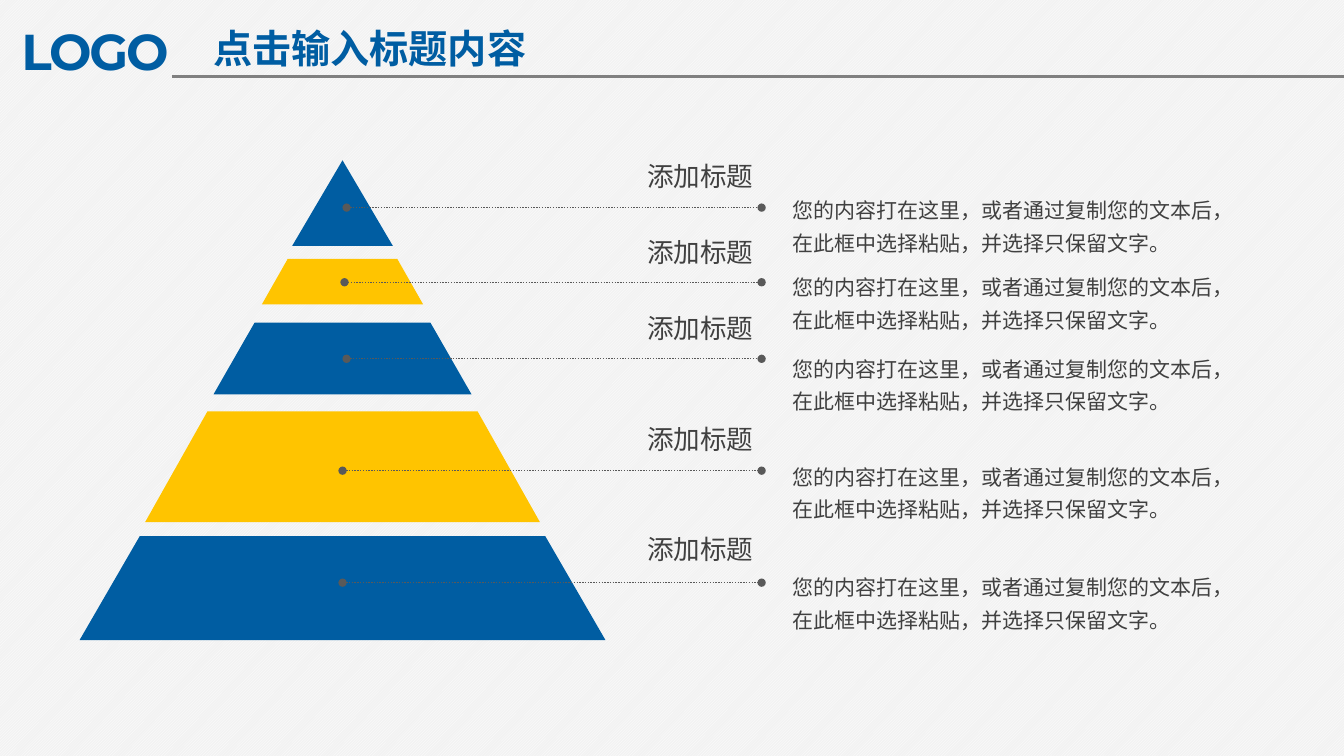
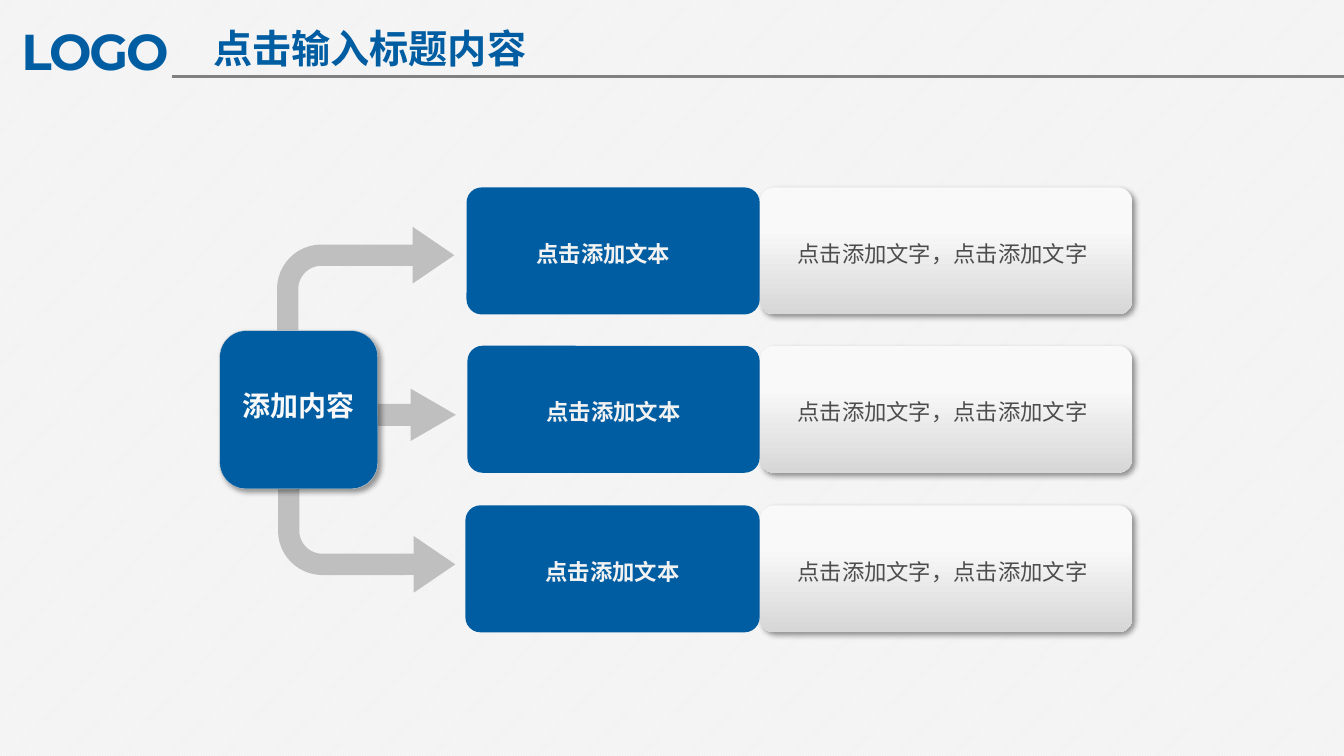
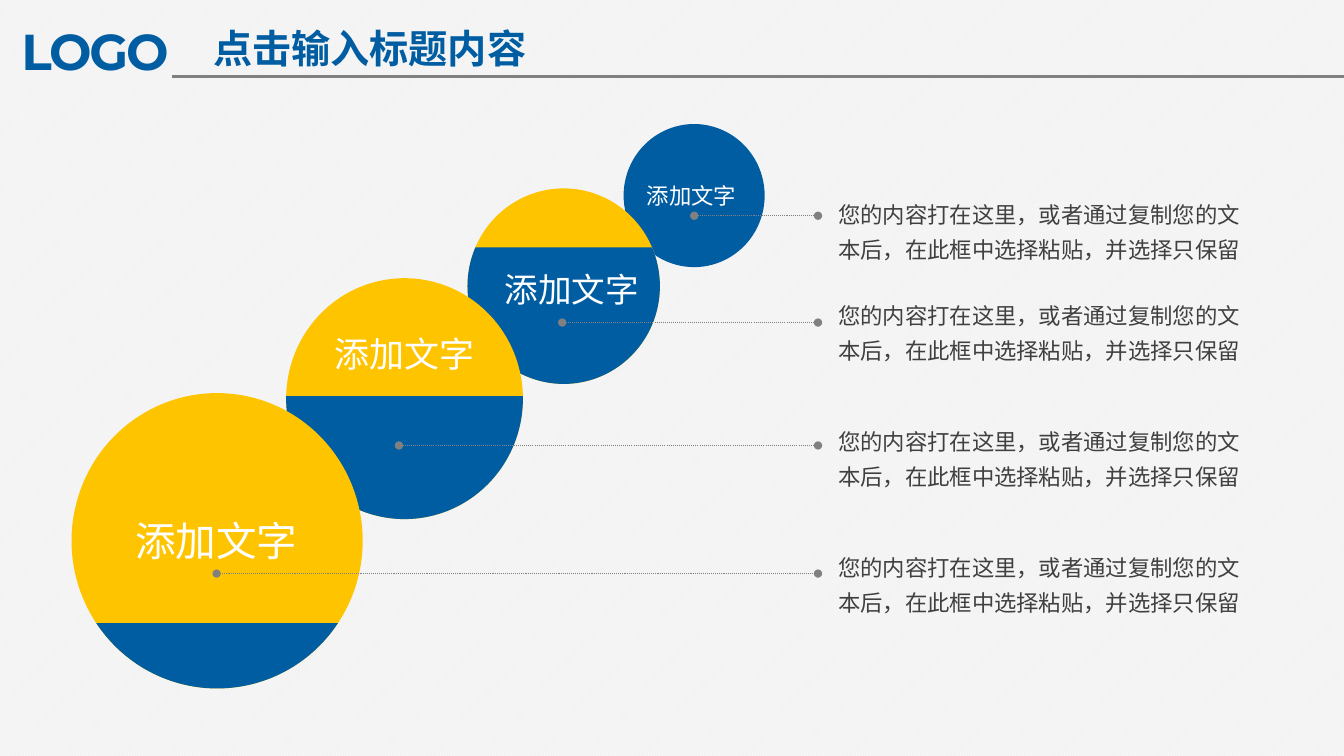
from math import asin, degrees

from lxml.etree import SubElement
from pptx import Presentation
from pptx.dml.color import RGBColor
from pptx.enum.dml import MSO_LINE, MSO_PATTERN
from pptx.enum.shapes import MSO_CONNECTOR, MSO_SHAPE
from pptx.enum.text import MSO_ANCHOR as Anchor, MSO_AUTO_SIZE, PP_ALIGN as Align
from pptx.oxml.ns import qn
from pptx.util import Pt

# Shared style
BLUE = RGBColor(0x00, 0x5D, 0xA2)
YELLOW = RGBColor(0xFF, 0xC4, 0x00)
WHITE = RGBColor(0xFF, 0xFF, 0xFF)
PAPER = RGBColor(0xF2, 0xF2, 0xF2)
PALE = RGBColor(0xF9, 0xF9, 0xF9)
SILVER = RGBColor(0xD7, 0xD7, 0xD7)
ARROW_GRAY = RGBColor(0xBF, 0xBF, 0xBF)
RULE_GRAY = RGBColor(0x80, 0x80, 0x80)
LEADER_GRAY = RGBColor(0x59, 0x59, 0x59)
CARD_TEXT = RGBColor(0x4D, 0x4D, 0x4D)
BODY_TEXT = RGBColor(0x40, 0x40, 0x40)

CJK_FONT = "Noto Sans CJK SC"
LOGO_FONT = "Montserrat"
WIDTH, HEIGHT = 960.5, 540
TEXT_INSETS = (7.9, 3.6, 7.9, 3.6)

# Repeated wording
TITLE = "点击输入标题内容"
BODY_START = "您的内容打在这里，或者通过复制您的文本后，在此框中选择粘贴，并选择只保留"


def points(*lengths):
    return [Pt(length) for length in lengths]


def write(frame, text, size, color, bold=False, align=Align.LEFT,
          spacing=None, font_name=CJK_FONT, insets=TEXT_INSETS):
    """Fill a text frame with one formatted paragraph."""
    frame.text = text
    (frame.margin_left, frame.margin_top,
     frame.margin_right, frame.margin_bottom) = points(*insets)
    paragraph = frame.paragraphs[0]
    paragraph.alignment = align
    if spacing:
        paragraph.line_spacing = spacing
    run = paragraph.runs[0]
    run.font.size = Pt(size)
    run.font.bold = bold
    run.font.color.rgb = color
    run.font.name = font_name
    SubElement(run.font._element, qn("a:ea"), typeface=font_name)
    return run


def add_text(slide, box, text, size, color, wrap=True, anchor=Anchor.TOP, **style):
    frame = slide.shapes.add_textbox(*points(*box)).text_frame
    frame.word_wrap = wrap
    frame.auto_size = MSO_AUTO_SIZE.SHAPE_TO_FIT_TEXT
    frame.vertical_anchor = anchor
    return write(frame, text, size, color, **style)


def paint(shape, color):
    shape.shadow.inherit = False
    shape.line.fill.background()
    shape.fill.solid()
    shape.fill.fore_color.rgb = color
    return shape


def add_preset(slide, preset, box, color, adjustments=()):
    shape = paint(slide.shapes.add_shape(preset, *points(*box)), color)
    for index, value in enumerate(adjustments):
        shape.adjustments[index] = value
    return shape


def add_line(slide, start, end, color, width):
    line = slide.shapes.add_connector(
        MSO_CONNECTOR.STRAIGHT, *points(*start, *end))
    line.line.color.rgb = color
    line.line.width = Pt(width)
    SubElement(line._element.spPr, qn("a:effectLst"))
    return line


def add_leader(slide, x, y, end_x, color, width):
    """Dotted horizontal line with a dot at each end."""
    leader = add_line(slide, (x, y), (end_x, y), color, width)
    leader.line.dash_style = MSO_LINE.ROUND_DOT
    outline = leader._element.spPr.find(qn("a:ln"))
    for end in ("a:headEnd", "a:tailEnd"):
        SubElement(outline, qn(end), type="oval")


def add_drop_shadow(shape):
    effects = shape._element.spPr.find(qn("a:effectLst"))
    shadow = SubElement(effects, qn("a:outerShdw"), blurRad="50800",
                        dist="38100", dir="2700000", algn="tl", rotWithShape="0")
    tint = SubElement(shadow, qn("a:srgbClr"), val="000000")
    SubElement(tint, qn("a:alpha"), val="40000")


def new_slide(prs):
    """Slide with the shared header."""
    slide = prs.slides.add_slide(prs.slide_layouts[5])
    logo_run = add_text(slide, (5.8, 9.4, 134, 53.3), "LOGO", 36, BLUE, bold=True,
                        font_name=LOGO_FONT, insets=(9.4, 5, 9.4, 5))
    logo_run.font._element.set("spc", "-150")
    add_line(slide, (123.1, 54.7), (WIDTH, 54.7), RULE_GRAY, 2)

    title = slide.shapes.title
    title.left, title.top, title.width, title.height = points(134.6, 13.7, 259.2, 41)
    title.text_frame.vertical_anchor = Anchor.TOP
    title.text_frame.auto_size = MSO_AUTO_SIZE.SHAPE_TO_FIT_TEXT
    write(title.text_frame, TITLE, 28, BLUE, bold=True, align=Align.CENTER,
          insets=(7.2, 3.6, 7.2, 3.6))
    return slide


# Slide 1: pyramid
def add_tier(slide, center, top, bottom, half_top, half_bottom, color):
    builder = slide.shapes.build_freeform(*points(center - half_top, top))
    corners = [(center + half_top, top), (center + half_bottom, bottom),
               (center - half_bottom, bottom)]
    builder.add_line_segments([points(*corner) for corner in corners], close=True)
    paint(builder.convert_to_shape(), color)


def pyramid_slide(prs):
    slide = new_slide(prs)
    center = 244.8
    add_preset(slide, MSO_SHAPE.ISOSCELES_TRIANGLE,
               (center - 36, 114.5, 72, 61.2), BLUE)
    tiers = [  # top, bottom, half widths at top and bottom, colour
        (185, 217.4, 39.2, 57.6, YELLOW),
        (230.4, 281.7, 62.8, 92.2, BLUE),
        (293.8, 373, 96.5, 141.1, YELLOW),
        (383, 457.2, 144.9, 187.9, BLUE),
    ]
    for tier in tiers:
        add_tier(slide, center, *tier)

    rows = [  # leader x and y, label top, body top
        (247.7, 148.3, 110.9, 132.5),
        (246.2, 201.6, 164.9, 187.2),
        (247.7, 256.3, 219.6, 245.5),
        (244.8, 336.2, 298.8, 322.6),
        (244.8, 416.2, 377.3, 401.8),
    ]
    for leader_x, leader_y, label_top, body_top in rows:
        add_leader(slide, leader_x, leader_y, 544.3, LEADER_GRAY, 1)
        add_text(slide, (454.3, label_top, 92.2, 31), "添加标题", 19, BODY_TEXT,
                 wrap=False, align=Align.CENTER)
        add_text(slide, (558.7, body_top, 318.2, 54.7), BODY_START + "文字。",
                 15, BODY_TEXT, spacing=1.3)


# Slide 2: one source, three branches
def add_card(slide, box, text):
    card = add_preset(slide, MSO_SHAPE.ROUNDED_RECTANGLE, box, PALE, [0.115])
    card.fill.gradient()
    card.fill.gradient_angle = 270
    for stop, position, color in zip(card.fill.gradient_stops,
                                     (0.33, 1), (PALE, SILVER)):
        stop.position = position
        stop.color.rgb = color
    add_drop_shadow(card)
    write(card.text_frame, text, 16, CARD_TEXT, spacing=1.2,
          insets=(24, 3.6, 7.2, 3.6))


def branches_slide(prs):
    slide = new_slide(prs)
    bend = [0.12, 0.16, 0.235, 0.25]
    lower_arrow = add_preset(slide, MSO_SHAPE.BENT_ARROW,
                             (198.7, 275.8, 126.7, 147.6), ARROW_GRAY, bend)
    lower_arrow._element.spPr.find(qn("a:xfrm")).set("flipV", "1")
    add_preset(slide, MSO_SHAPE.RIGHT_ARROW, (175.3, 277.6, 150.5, 37.4),
               ARROW_GRAY, [0.42, 0.865])
    add_preset(slide, MSO_SHAPE.BENT_ARROW, (198, 162, 126.7, 147.6),
               ARROW_GRAY, bend)

    card_left, row_height = 542.9, 90.7
    rows = [  # top, heading left, heading alignment, heading left inset
        (133.9, 333.4, Align.LEFT, 46.8),
        (247, 334.1, Align.CENTER, 7.2),
        (361, 332.6, Align.CENTER, 7.2),
    ]
    for top, left, align, inset in rows:
        add_card(slide, (card_left, top, 266.4, row_height),
                 "点击添加文字，点击添加文字")
        heading = add_preset(slide, MSO_SHAPE.ROUNDED_RECTANGLE,
                             (left, top, card_left - left, row_height), BLUE, [0.119])
        write(heading.text_frame, "点击添加文本", 16, PAPER, bold=True, align=align,
              spacing=1.2, insets=(inset, 3.6, 7.2, 3.6))

    hub = add_preset(slide, MSO_SHAPE.ROUNDED_RECTANGLE, (157, 236.2, 113, 113), BLUE)
    hub.line.color.rgb = SILVER
    hub.line.width = Pt(0.25)
    add_drop_shadow(hub)
    write(hub.text_frame, "添加内容", 20, PALE, bold=True, align=Align.CENTER,
          spacing=1.2, insets=(10.1, 3.6, 10.1, 14.4))


# Slide 3: growing circles
def add_filled_circle(slide, box, level):
    """Yellow circle, blue below the given level."""
    _, top, _, height = box
    add_preset(slide, MSO_SHAPE.OVAL, box, YELLOW)
    angle = degrees(asin(2 * (level - top) / height - 1))
    # Chord angles count in 60000ths of a degree, adjustments in 100000ths
    add_preset(slide, MSO_SHAPE.CHORD, box, BLUE,
               [angle % 360 * 0.6, (180 - angle) * 0.6])


def circles_slide(prs):
    slide = new_slide(prs)
    add_preset(slide, MSO_SHAPE.OVAL, (445.7, 88.6, 100.8, 102.2), BLUE)
    circles = [  # box, level
        ((334.1, 134.6, 137.5, 139.7), 176.4),
        ((204.5, 198.7, 169.2, 172.1), 283),
        ((51.1, 280.8, 208.1, 211), 445.7),
    ]
    for box, level in circles:
        add_filled_circle(slide, box, level)

    rows = [  # label box, label size, leader x and y, body top
        ((454.3, 126, 79.9, 27.4), 16, 496.1, 154.1, 134.6),
        ((352.8, 187.9, 112.3, 36.7), 24, 401.8, 230.4, 206.6),
        ((231.1, 233.3, 116.6, 38.2), 25, 285.1, 318.2, 296.6),
        ((88.6, 365, 132.5, 42.5), 29, 154.8, 409.7, 386.6),
    ]
    for label_box, size, leader_x, leader_y, body_top in rows:
        add_text(slide, label_box, "添加文字", size, WHITE, wrap=False,
                 anchor=Anchor.MIDDLE)
        add_leader(slide, leader_x, leader_y, 584.6, RULE_GRAY, 0.75)
        add_text(slide, (591.1, body_top, 318.2, 60.5), BODY_START, 16, BODY_TEXT,
                 spacing=1.3)


def main():
    prs = Presentation()
    prs.slide_width, prs.slide_height = points(WIDTH, HEIGHT)
    backdrop = prs.slide_master.background.fill
    backdrop.patterned()
    backdrop.pattern = MSO_PATTERN.LIGHT_UPWARD_DIAGONAL
    backdrop.fore_color.rgb = WHITE
    backdrop.back_color.rgb = PAPER
    pyramid_slide(prs)
    branches_slide(prs)
    circles_slide(prs)
    prs.save("out.pptx")


if __name__ == "__main__":
    main()
